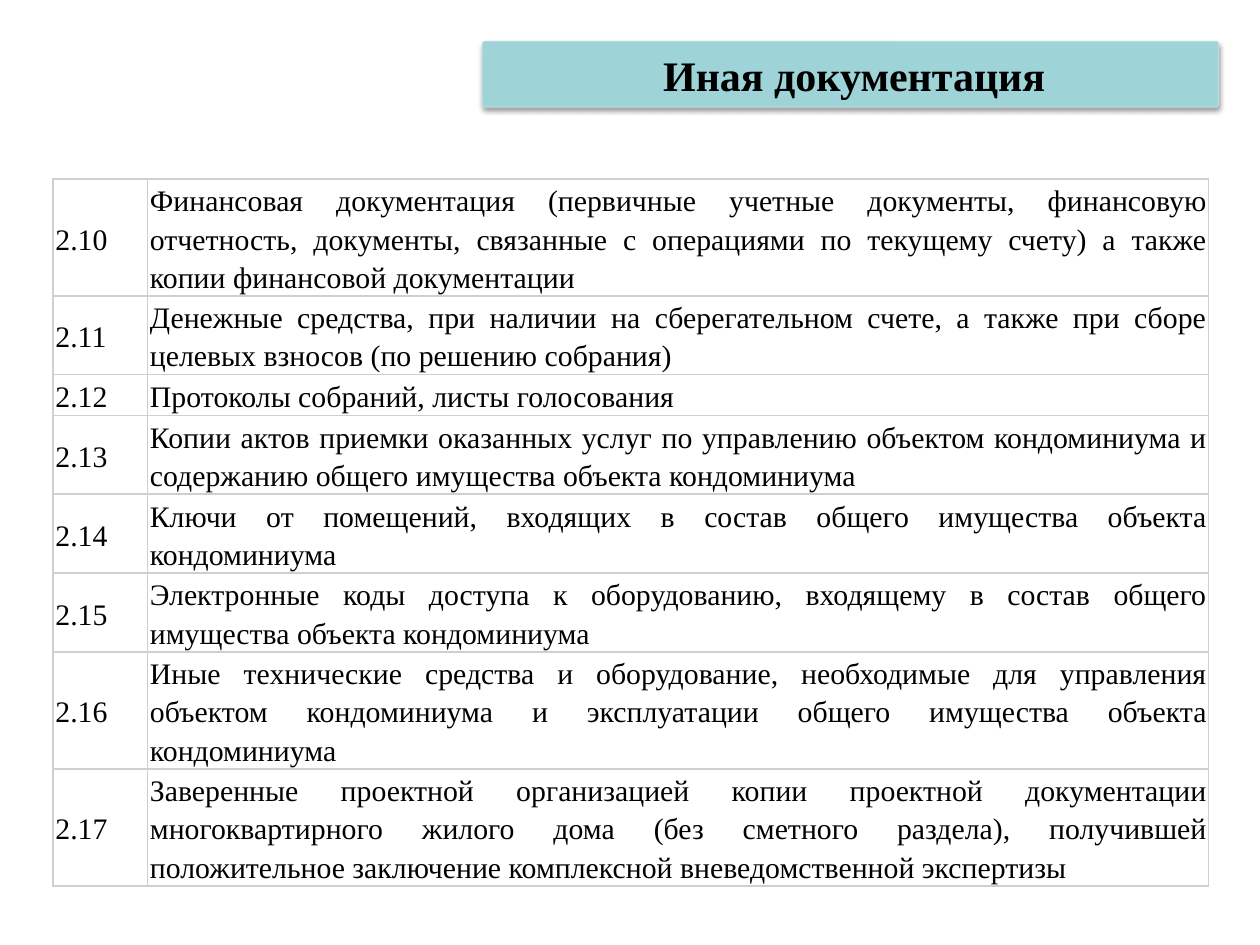
from dataclasses import dataclass

from lxml.etree import SubElement
from pptx import Presentation
from pptx.dml.color import RGBColor
from pptx.enum.shapes import MSO_SHAPE
from pptx.enum.text import MSO_ANCHOR, PP_ALIGN
from pptx.oxml.ns import qn
from pptx.util import Inches, Pt


@dataclass(frozen=True)
class Theme:
    font: str = "Times New Roman"
    ink: str = "000000"
    banner: str = "9ED3D7"
    banner_edge: str = "B6DCDF"
    grid: str = "CFCFCF"
    title_size: int = 24
    body_size: int = 17


DOCUMENTS = [
    ("Финансовая документация (первичные учетные документы, финансовую отчетность, документы, "
     "связанные с операциями по текущему счету) а также копии финансовой документации", 3),
    ("Денежные средства, при наличии на сберегательном счете, а также при сборе целевых взносов "
     "(по решению собрания)", 2),
    ("Протоколы собраний, листы голосования", 1),
    ("Копии актов приемки оказанных услуг по управлению объектом кондоминиума и содержанию общего "
     "имущества объекта кондоминиума", 2),
    ("Ключи от помещений, входящих в состав общего имущества объекта кондоминиума", 2),
    ("Электронные коды доступа к оборудованию, входящему в состав общего имущества объекта "
     "кондоминиума", 2),
    ("Иные технические средства и оборудование, необходимые для управления объектом кондоминиума "
     "и эксплуатации общего имущества объекта кондоминиума", 3),
    ("Заверенные проектной организацией копии проектной документации многоквартирного жилого дома "
     "(без сметного раздела), получившей положительное заключение комплексной вневедомственной "
     "экспертизы", 3),
]


class SlideBuilder:
    """Draws the elements of one slide in a shared theme."""

    def __init__(self, slide, theme):
        self.slide = slide
        self.theme = theme

    def style(self, paragraph, size, align, bold=False):
        paragraph.alignment = align
        font = paragraph.font
        font.name, font.size, font.bold = self.theme.font, Pt(size), bold
        font.color.rgb = RGBColor.from_string(self.theme.ink)

    def banner(self, title, left, top, width, height):
        banner = self.slide.shapes.add_shape(
            MSO_SHAPE.ROUNDED_RECTANGLE, Inches(left), Inches(top), Inches(width), Inches(height))
        banner.adjustments[0] = 0.04
        banner.fill.solid()
        banner.fill.fore_color.rgb = RGBColor.from_string(self.theme.banner)
        banner.line.color.rgb = RGBColor.from_string(self.theme.banner_edge)
        banner.line.width = Pt(0.75)
        self.shadow(banner)
        frame = banner.text_frame
        frame.word_wrap = True
        frame.vertical_anchor = MSO_ANCHOR.MIDDLE
        frame.margin_left, frame.margin_right = Inches(0.06), 0
        frame.text = title
        self.style(frame.paragraphs[0], self.theme.title_size, PP_ALIGN.CENTER, bold=True)

    def shadow(self, shape):
        shape.shadow.inherit = False
        effects = shape._element.spPr.find(qn("a:effectLst"))
        outer = SubElement(effects, qn("a:outerShdw"), blurRad=str(Pt(3.1)), dist=str(Pt(1.6)),
                           dir="5400000", rotWithShape="0")
        tint = SubElement(outer, qn("a:srgbClr"), val=self.theme.ink)
        SubElement(tint, qn("a:alpha"), val="38000")

    def table(self, documents, left, top, widths, line_height):
        heights = [Inches(lines * line_height + 0.02) for _, lines in documents]
        table = self.slide.shapes.add_table(
            len(documents), len(widths), Inches(left), Inches(top),
            Inches(sum(widths)), sum(heights)).table
        table.first_row = table.horz_banding = False
        for column, width in zip(table.columns, widths):
            column.width = Inches(width)
        for index, (description, _) in enumerate(documents):
            table.rows[index].height = heights[index]
            for column, text in enumerate((f"2.{index + 10}", description)):
                self.cell(table.cell(index, column), text)

    def cell(self, cell, text):
        cell.text = text
        cell.vertical_anchor = MSO_ANCHOR.MIDDLE
        cell.margin_left = cell.margin_right = cell.margin_top = cell.margin_bottom = Inches(0.01)
        paragraph = cell.text_frame.paragraphs[0]
        self.style(paragraph, self.theme.body_size, PP_ALIGN.JUSTIFY)
        paragraph.line_spacing = 1.15
        paragraph.space_after = Pt(1)
        paragraph._p.get_or_add_pPr().set("marL", str(Inches(0.01)))
        properties = cell._tc.get_or_add_tcPr()
        for side in "LRTB":
            border = SubElement(properties, qn(f"a:ln{side}"), w=str(Pt(1)))
            fill = SubElement(border, qn("a:solidFill"))
            SubElement(fill, qn("a:srgbClr"), val=self.theme.grid)
        cell.fill.background()


def main():
    presentation = Presentation()
    presentation.slide_width, presentation.slide_height = Inches(10), Inches(7.5)
    slide = presentation.slides.add_slide(presentation.slide_layouts[6])
    builder = SlideBuilder(slide, Theme())
    builder.table(DOCUMENTS, left=0.42, top=1.42, widths=(0.75, 8.42), line_height=0.3)
    builder.banner("Иная документация", left=3.83, top=0.33, width=5.84, height=0.52)
    presentation.save("out.pptx")


if __name__ == "__main__":
    main()
